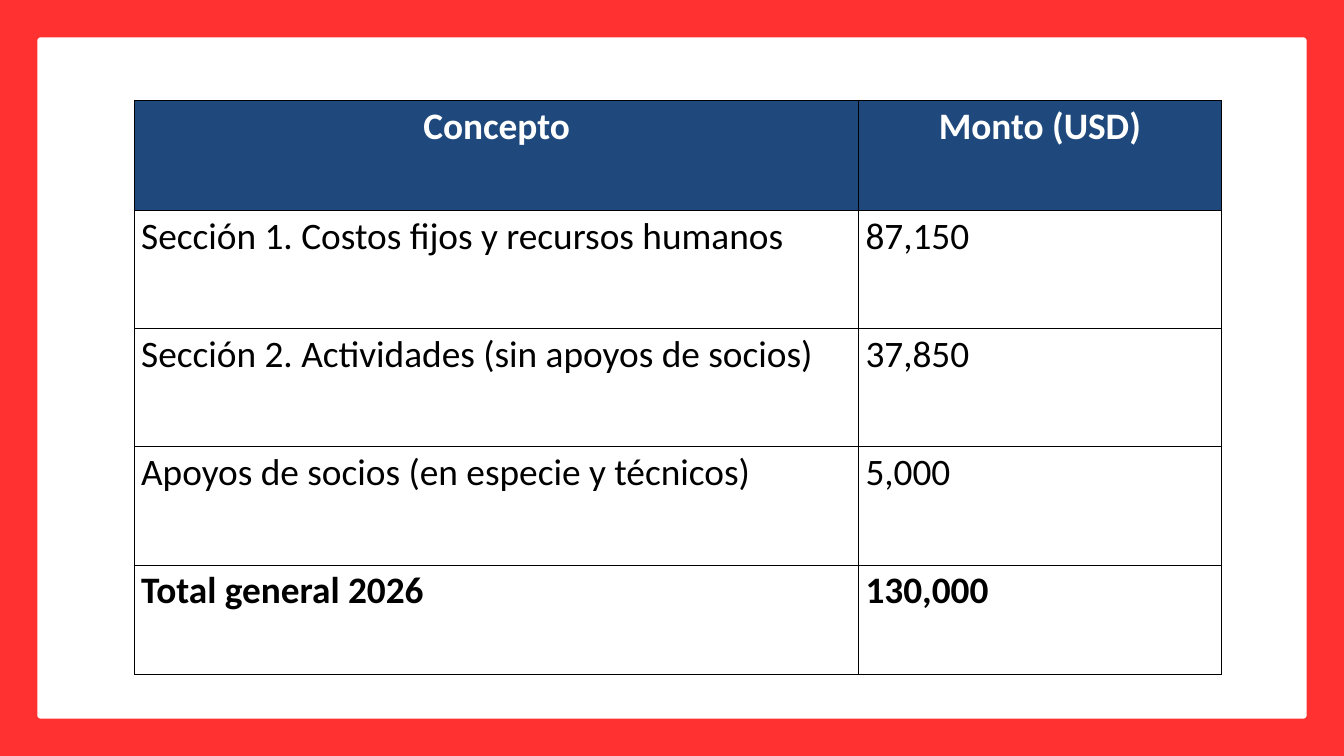
from lxml.etree import SubElement
from pptx import Presentation
from pptx.dml.color import RGBColor
from pptx.enum.shapes import MSO_SHAPE
from pptx.enum.text import PP_ALIGN
from pptx.oxml.ns import qn
from pptx.util import Inches, Pt

WIDTH, HEIGHT = 20, 11.25
MARGIN = WIDTH / 36
RED, WHITE, NAVY, BLACK = "FF3131", "FFFFFF", "1F497D", "000000"
COLUMN_SHARES = (2 / 3, 1 / 3)
ROW_HEIGHTS = (1.63, 1.76, 1.76, 1.76, 1.63)
BUDGET = (
    ("Concepto", "Monto (USD)"),
    ("Sección 1. Costos fijos y recursos humanos", "87,150"),
    ("Sección 2. Actividades (sin apoyos de socios)", "37,850"),
    ("Apoyos de socios (en especie y técnicos)", "5,000"),
    ("Total general 2026", "130,000"),
)


def paint(fill, color):
    """Give a fill one solid colour."""
    fill.solid()
    fill.fore_color.rgb = RGBColor.from_string(color)


def add_panel(s, box):
    """Place the white panel with slightly rounded corners."""
    sp = s.shapes.add_shape(MSO_SHAPE.ROUNDED_RECTANGLE, *map(Inches, box))
    sp.adjustments[0] = 0.005
    sp.shadow.inherit = False
    sp.line.fill.background()
    paint(sp.fill, WHITE)


def add_borders(cell):
    """Draw a thin black line on each side of a cell."""
    tc_pr = cell._tc.get_or_add_tcPr()
    for side in ("a:lnL", "a:lnR", "a:lnT", "a:lnB"):
        ln = SubElement(tc_pr, qn(side), w=str(Pt(1)))
        SubElement(SubElement(ln, qn("a:solidFill")), qn("a:srgbClr"), val=BLACK)


def write_cell(cell, text, header, bold):
    """Write and format one cell of the budget."""
    add_borders(cell)
    if header:
        paint(cell.fill, NAVY)
    else:
        cell.fill.background()
    p = cell.text_frame.paragraphs[0]
    p.alignment = PP_ALIGN.CENTER if header else PP_ALIGN.LEFT
    r = p.add_run()
    r.text = text
    for name, value in {"name": "Calibri", "size": Pt(40), "bold": bold}.items():
        setattr(r.font, name, value)
    paint(r.font.fill, WHITE if header else BLACK)


def add_budget(s, box):
    """Place the budget table in its box."""
    table = s.shapes.add_table(len(BUDGET), len(COLUMN_SHARES), *map(Inches, box)).table
    for flag in ("first_row", "horz_banding"):
        setattr(table, flag, False)
    for column, share in zip(table.columns, COLUMN_SHARES):
        column.width = Inches(box[2] * share)
    last = len(BUDGET) - 1
    for i, (row, height, texts) in enumerate(zip(table.rows, ROW_HEIGHTS, BUDGET)):
        row.height = Inches(height)
        for cell, text in zip(row.cells, texts):
            write_cell(cell, text, header=i == 0, bold=i in (0, last))


def main():
    """Build the budget slide."""
    prs = Presentation()
    prs.slide_width, prs.slide_height = Inches(WIDTH), Inches(HEIGHT)
    s = prs.slides.add_slide(prs.slide_layouts[6])
    paint(s.background.fill, RED)
    add_panel(s, (MARGIN, MARGIN, WIDTH - 2 * MARGIN, HEIGHT - 2 * MARGIN))
    add_budget(s, (0.1 * WIDTH, 1.5, 16.17, sum(ROW_HEIGHTS)))
    prs.save("out.pptx")


if __name__ == "__main__":
    main()
